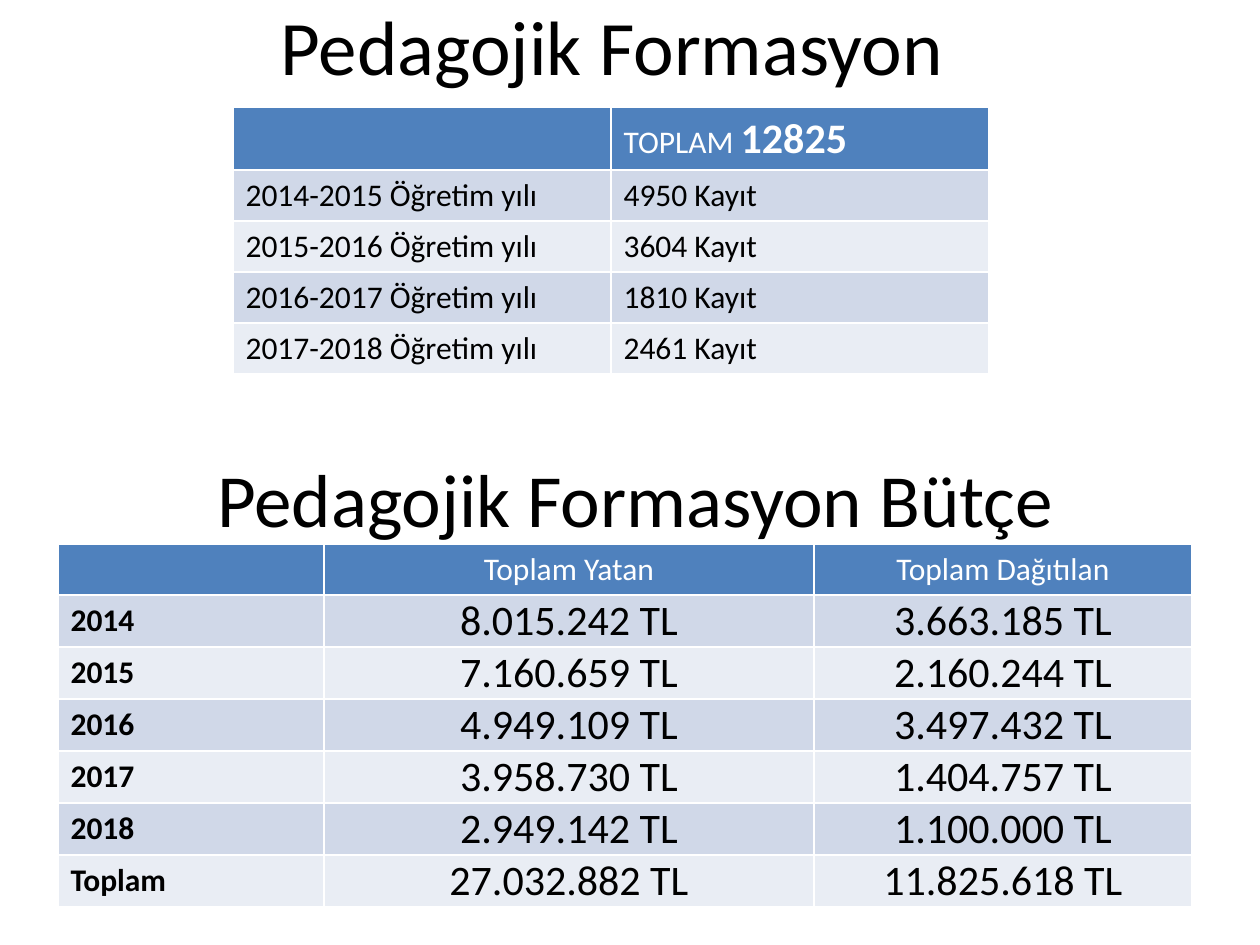
from pptx import Presentation
from pptx.dml.color import RGBColor
from pptx.enum.text import MSO_ANCHOR, PP_ALIGN
from pptx.util import Pt

SCALE = 914400 / 126
BLACK, WHITE, HEADER = "000000", "FFFFFF", "4F81BD"
BANDS = ["D0D8E8", "E9EDF4"]


def px(length):
    return round(length * SCALE)


def color(value):
    return RGBColor.from_string(value)


presentation = Presentation()
presentation.slide_width, presentation.slide_height = px(1260), px(945)
slide = presentation.slides.add_slide(presentation.slide_layouts[5])

# Headings: the title placeholder and a text box
title = slide.shapes.title
budget_heading = slide.shapes.add_textbox(0, 0, 0, 0)
headings = [
    (title, "Pedagojik Formasyon ", 44, (54, -34, 1134, 158), {"vertical_anchor": MSO_ANCHOR.MIDDLE}),
    (budget_heading, "Pedagojik Formasyon Bütçe", 42.9, (78, 433, 1114, 110),
     {"vertical_anchor": MSO_ANCHOR.BOTTOM, "margin_left": 0, "margin_right": 0,
      "margin_top": px(6), "margin_bottom": 0}),
]
for shape, text, size, box, frame_format in headings:
    for name, length in zip(("left", "top", "width", "height"), box):
        setattr(shape, name, px(length))
    frame = shape.text_frame
    frame.word_wrap = True
    for name, value in frame_format.items():
        setattr(frame, name, value)
    paragraph = frame.paragraphs[0]
    paragraph.alignment = PP_ALIGN.CENTER
    run = paragraph.add_run()
    run.text = text
    run.font.name, run.font.size = "Calibri", Pt(size)
    run.font.color.rgb = color(BLACK)

# Table contents
enrolment_rows = [
    ["", "TOPLAM 12825"],
    ["2014-2015 Öğretim yılı", "4950 Kayıt"],
    ["2015-2016 Öğretim yılı", "3604 Kayıt"],
    ["2016-2017 Öğretim yılı", "1810 Kayıt"],
    ["2017-2018 Öğretim yılı", "2461 Kayıt"],
]
budget_rows = [
    ["", "Toplam Yatan", "Toplam Dağıtılan"],
    ["2014", "8.015.242 TL", "3.663.185 TL"],
    ["2015", "7.160.659 TL", "2.160.244 TL"],
    ["2016", "4.949.109 TL", "3.497.432 TL"],
    ["2017", "3.958.730 TL", "1.404.757 TL"],
    ["2018", "2.949.142 TL", "1.100.000 TL"],
    ["Toplam", "27.032.882 TL", "11.825.618 TL"],
]
amount_format = {"vertical_anchor": MSO_ANCHOR.BOTTOM, "margin_left": px(1),
                 "margin_right": px(1), "margin_top": px(1), "margin_bottom": 0}

# Tables: rows, left, top, column widths, header height, row height, is budget
tables = [
    (enrolment_rows, 233, 107, [378, 378], 63, 51, False),
    (budget_rows, 58, 544, [266, 490, 378], 51, 52, True),
]
for rows, left, top, widths, header_height, row_height, is_budget in tables:
    heights = [header_height] + [row_height] * (len(rows) - 1)
    table = slide.shapes.add_table(len(rows), len(widths), px(left), px(top),
                                   px(sum(widths)), px(sum(heights))).table
    for column, width in zip(table.columns, widths):
        column.width = px(width)
    for row_index, texts in enumerate(rows):
        table.rows[row_index].height = px(heights[row_index])
        is_header = row_index == 0
        for column_index, text in enumerate(texts):
            cell = table.cell(row_index, column_index)
            cell.fill.solid()
            cell.fill.fore_color.rgb = color(HEADER if is_header else BANDS[(row_index - 1) % 2])
            is_amount = is_budget and column_index > 0 and not is_header
            if is_amount:
                for name, value in amount_format.items():
                    setattr(cell, name, value)
            paragraph = cell.text_frame.paragraphs[0]
            if is_budget and column_index > 0:
                paragraph.alignment = PP_ALIGN.CENTER
            is_label = is_budget and column_index == 0
            runs = [(text, 24 if is_amount else 18, is_label)] if text else []
            # The enrolment total stands out within its header
            if is_header and text and not is_budget:
                label, total = text.split()
                runs = [(label + " ", 18, False), (total, 24, True)]
            for run_text, size, bold in runs:
                run = paragraph.add_run()
                run.text = run_text
                font_format = {"name": "Calibri", "size": Pt(size), "bold": bold}
                for name, value in font_format.items():
                    setattr(run.font, name, value)
                run.font.color.rgb = color(WHITE if is_header else BLACK)

presentation.save("out.pptx")
